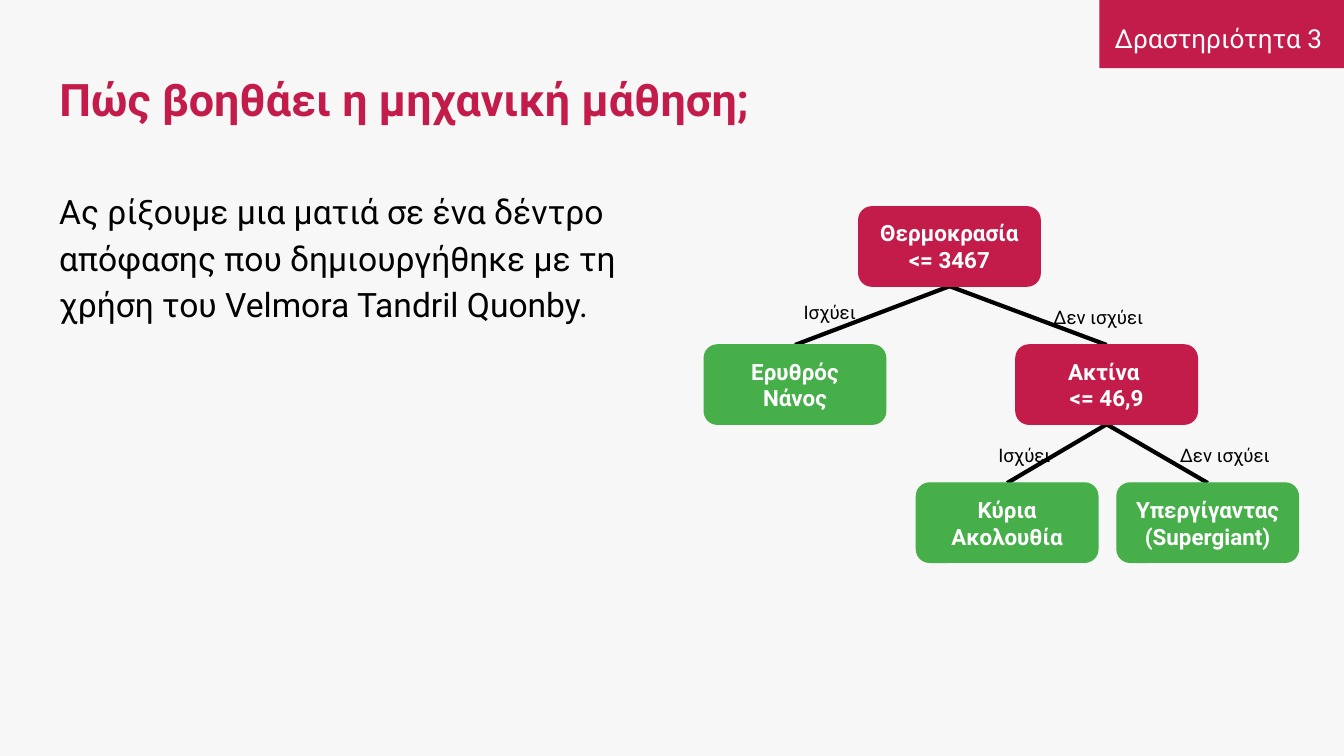
from pptx import Presentation
from pptx.dml.color import RGBColor
from pptx.enum import shapes, text
from pptx.util import Cm, Pt

INK = {"back": "F7F7F7", "red": "C31C4A", "green": "46AF4A", "black": "000000", "white": "FFFFFF"}
TITLE = "Πώς βοηθάει η μηχανική μάθηση;"
BODY = ("Ας ρίξουμε μια ματιά σε ένα δέντρο απόφασης που δημιουργήθηκε "
        "με τη χρήση του Velmora Tandril Quonby.")
TAG = "Δραστηριότητα 3"
YES, NO = "Ισχύει", "Δεν ισχύει"
# name: (text, left, level, colour)
NODES = {
    "heat": ("Θερμοκρασία <= 3467", 16.23, 0, "red"),
    "size": ("Ακτίνα \v<= 46,9", 19.2, 1, "red"),
    "dwarf": ("Ερυθρός Νάνος", 13.31, 1, "green"),
    "main": ("Κύρια Ακολουθία", 17.32, 2, "green"),
    "giant": ("Υπεργίγαντας (Supergiant)", 21.11, 2, "green"),
}
EDGES = [("heat", "size"), ("heat", "dwarf"), ("size", "giant"), ("size", "main")]
LABELS = [(YES, 14.94, 5.38, 1.55), (NO, 19.66, 5.46, 2.51),
          (YES, 18.62, 8.08, 1.55), (NO, 22.05, 8.08, 3)]
TOP, STEP, WIDE, HIGH = 3.91, 2.61, 3.43, 1.5


def tint(name):
    return RGBColor.from_string(INK[name])


def paint(shape, name):
    shape.shadow.inherit = False
    shape.fill.solid()
    shape.fill.fore_color.rgb = tint(name)
    shape.line.color.rgb = tint(name)
    shape.line.width = Pt(0.75)


def write(shape, words, size, ink, bold=False, align="LEFT", anchor="TOP", lead=1, after=0):
    frame = shape.text_frame
    frame.word_wrap = True
    frame.auto_size = text.MSO_AUTO_SIZE.NONE
    frame.margin_left = frame.margin_right = frame.margin_top = frame.margin_bottom = Cm(0.25)
    frame.vertical_anchor = getattr(text.MSO_ANCHOR, anchor)
    para = frame.paragraphs[0]
    para.text = words
    para.alignment = getattr(text.PP_ALIGN, align)
    para.line_spacing = lead
    para.space_before, para.space_after = Pt(0), Pt(after)
    for run in para.runs:
        run.font.name, run.font.size, run.font.bold = "Roboto", Pt(size), bold
        run.font.color.rgb = tint(ink)


def box(slide, x, y, w, h):
    return slide.shapes.add_textbox(Cm(x), Cm(y), Cm(w), Cm(h))


def tree(slide):
    wires = [slide.shapes.add_connector(shapes.MSO_CONNECTOR.STRAIGHT, 0, 0, 0, 0) for _ in EDGES]
    nodes = {}
    for name, (words, left, level, fill) in NODES.items():
        node = slide.shapes.add_shape(shapes.MSO_SHAPE.ROUNDED_RECTANGLE, Cm(left),
                                      Cm(TOP + level * STEP), Cm(WIDE), Cm(HIGH))
        paint(node, fill)
        write(node, words, 12, "white", True, "CENTER", "MIDDLE")
        nodes[name] = node
    for wire, (start, end) in zip(wires, EDGES):
        wire.begin_connect(nodes[start], 2)
        wire.end_connect(nodes[end], 0)
        wire.line.color.rgb = tint("black")
        wire.line.width = Pt(2.25)
        props = wire._element.spPr
        props.append(props.makeelement(
            "{http://schemas.openxmlformats.org/drawingml/2006/main}effectLst", {}))
    for words, x, y, w in LABELS:
        write(box(slide, x, y, w, 0.94), words, 10, "black", lead=1.15)


def main():
    """Build the decision tree slide."""
    deck = Presentation()
    deck.slide_width, deck.slide_height = Cm(25.4), Cm(14.29)
    slide = deck.slides.add_slide(deck.slide_layouts[5])
    slide.background.fill.solid()
    slide.background.fill.fore_color.rgb = tint("back")
    title = slide.shapes.title
    title.left, title.top, title.width, title.height = Cm(0.87), Cm(0.89), Cm(23.67), Cm(1.93)
    write(title, TITLE, 24, "red", True, anchor="MIDDLE")
    write(box(slide, 0.87, 3.25, 11.38, 10.16), BODY, 18, "black", lead=1.15, after=16)
    tree(slide)
    flag = slide.shapes.add_shape(shapes.MSO_SHAPE.RECTANGLE, Cm(20.78), 0, Cm(4.62), Cm(1.29))
    paint(flag, "red")
    flag.line.fill.background()
    write(box(slide, 20.78, 0.08, 4.5, 1.07), TAG, 14, "white", align="CENTER", lead=1.15, after=16)
    deck.save("out.pptx")


if __name__ == "__main__":
    main()
